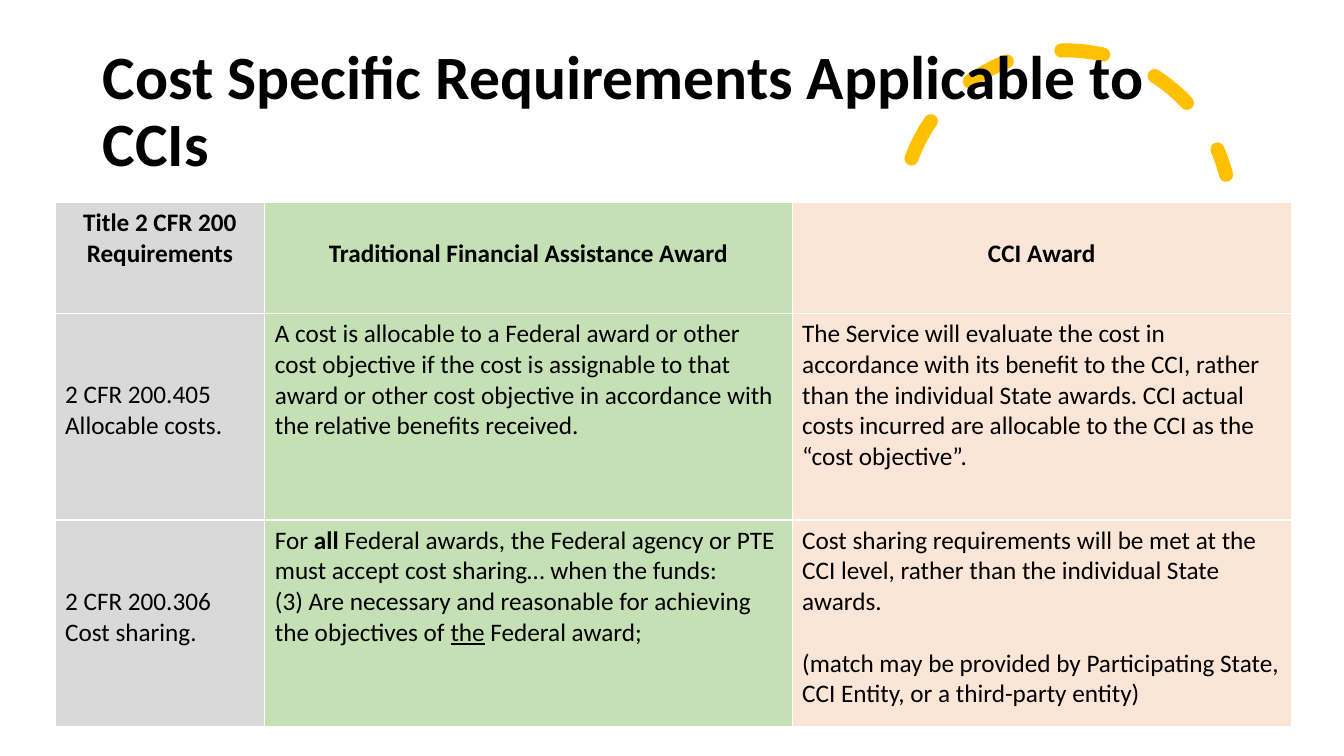
"""Build the slide on cost requirements for CCIs."""
from dataclasses import dataclass

from lxml import etree
from pptx import Presentation, util as u
from pptx.dml.color import RGBColor
from pptx.enum import dml, shapes, text

WIDE, HIGH = 13.33, 7.5
FONT = "Calibri"
BODY = 18
LINE = 0.305
HUES = {"ink": "000000", "gold": "FFC000", "gray": "D9D9D9",
        "green": "C5E0B4", "peach": "FBE5D6"}
COLS = ((2.08, "gray"), (5.23, "green"), (4.95, "peach"))
ROWS = (1.1, 2.05, 2.05)


@dataclass
class Run:
    words: str
    bold: bool = False
    under: bool = False


@dataclass
class Cell:
    paras: list[list[Run]]
    drop: int = 0
    gap: int = 0
    head: bool = False


def plain(*lines: str, drop: int = 0, gap: int = 0) -> Cell:
    return Cell([[Run(line)] for line in lines], drop, gap)


def head(words: str, drop: int = 0) -> Cell:
    return Cell([[Run(words, bold=True)]], drop, head=True)


GRID = (
    (head("Title 2 CFR 200 Requirements"),
     head("Traditional Financial Assistance Award", 1),
     head("CCI Award", 1)),
    (plain("2 CFR 200.405 Allocable costs.", drop=2),
     plain("A cost is allocable to a Federal award or other cost objective if the "
           "cost is assignable to that award or other cost objective in accordance "
           "with the relative benefits received."),
     plain("The Service will evaluate the cost in accordance with its benefit to the "
           "CCI, rather than the individual State awards. CCI actual costs incurred "
           "are allocable to the CCI as the “cost objective”.")),
    (plain("2 CFR 200.306 Cost sharing.", drop=2),
     Cell([[Run("For "), Run("all", bold=True),
            Run(" Federal awards, the Federal agency or PTE must accept cost "
                "sharing… when the funds:")],
           [Run("(3) Are necessary and reasonable for achieving the objectives of "),
            Run("the", under=True), Run(" Federal award;")]]),
     plain("Cost sharing requirements will be met at the CCI level, rather than the "
           "individual State awards.",
           "(match may be provided by Participating State, CCI Entity, or a "
           "third-party entity)", gap=1)),
)


def hue(name: str) -> RGBColor:
    return RGBColor.from_string(HUES[name])


def box(left: float, top: float, width: float, height: float) -> tuple:
    """Turn shares of the slide's size into lengths."""
    return (u.Inches(left * WIDE), u.Inches(top * HIGH),
            u.Inches(width * WIDE), u.Inches(height * HIGH))


def add_run(para, run: Run, size: float) -> None:
    part = para.add_run()
    part.text = run.words
    font = part.font
    font.name, font.size = FONT, u.Pt(size)
    font.bold, font.underline = run.bold, run.under
    font.color.rgb = hue("ink")


def draw_title(slide) -> None:
    title = slide.shapes.title
    title.left, title.top, title.width, title.height = box(0.069, 0.053, 0.863, 0.193)
    frame = title.text_frame
    frame.word_wrap = True
    frame.auto_size = text.MSO_AUTO_SIZE.NONE
    frame.vertical_anchor = text.MSO_ANCHOR.MIDDLE
    para = frame.paragraphs[0]
    para.alignment = text.PP_ALIGN.LEFT
    para.line_spacing = 0.9
    add_run(para, Run("Cost Specific Requirements Applicable to CCIs", bold=True), 44)


def draw_arc(slide) -> None:
    arc = slide.shapes.add_shape(shapes.MSO_SHAPE.ARC, *box(0.6707, 0.0667, 0.2453, 0.436))
    arc.shadow.inherit = False
    arc.adjustments[0] = 146.13 * 0.6
    arc.adjustments[1] = 0
    arc.rotation = 345.8
    arc.fill.background()
    arc.line.color.rgb = hue("gold")
    arc.line.width = u.Pt(10)
    arc.line.dash_style = dml.MSO_LINE.DASH
    edge = arc.line.fill._xPr
    edge.set("cap", "rnd")
    etree.SubElement(edge, edge.tag.replace("}ln", "}round"))
    slide.shapes.title.element.addprevious(arc.element)


def fill_cell(spot, cell: Cell, tint: str) -> None:
    spot.fill.solid()
    spot.fill.fore_color.rgb = hue(tint)
    spot.margin_top = u.Inches(0.05 + cell.drop * LINE)
    frame = spot.text_frame
    for rank, runs in enumerate(cell.paras):
        para = frame.add_paragraph() if rank else frame.paragraphs[0]
        para.alignment = text.PP_ALIGN.CENTER if cell.head else text.PP_ALIGN.LEFT
        if rank and cell.gap:
            para.space_before = u.Inches(cell.gap * LINE)
        for run in runs:
            add_run(para, run, BODY)


def draw_table(slide) -> None:
    place = box(0.041, 0.268, 0.919, 0.692)
    table = slide.shapes.add_table(len(ROWS), len(COLS), *place).table
    table.horz_banding = False
    for col, (width, _) in zip(table.columns, COLS):
        col.width = u.Inches(width)
    for row, height, cells in zip(table.rows, ROWS, GRID):
        row.height = u.Inches(height)
        for spot, cell, (_, tint) in zip(row.cells, cells, COLS):
            fill_cell(spot, cell, tint)


def main() -> None:
    deck = Presentation()
    deck.slide_width, deck.slide_height = u.Inches(WIDE), u.Inches(HIGH)
    slide = deck.slides.add_slide(deck.slide_layouts.get_by_name("Title Only"))
    draw_title(slide)
    draw_arc(slide)
    draw_table(slide)
    deck.save("out.pptx")


if __name__ == "__main__":
    main()
